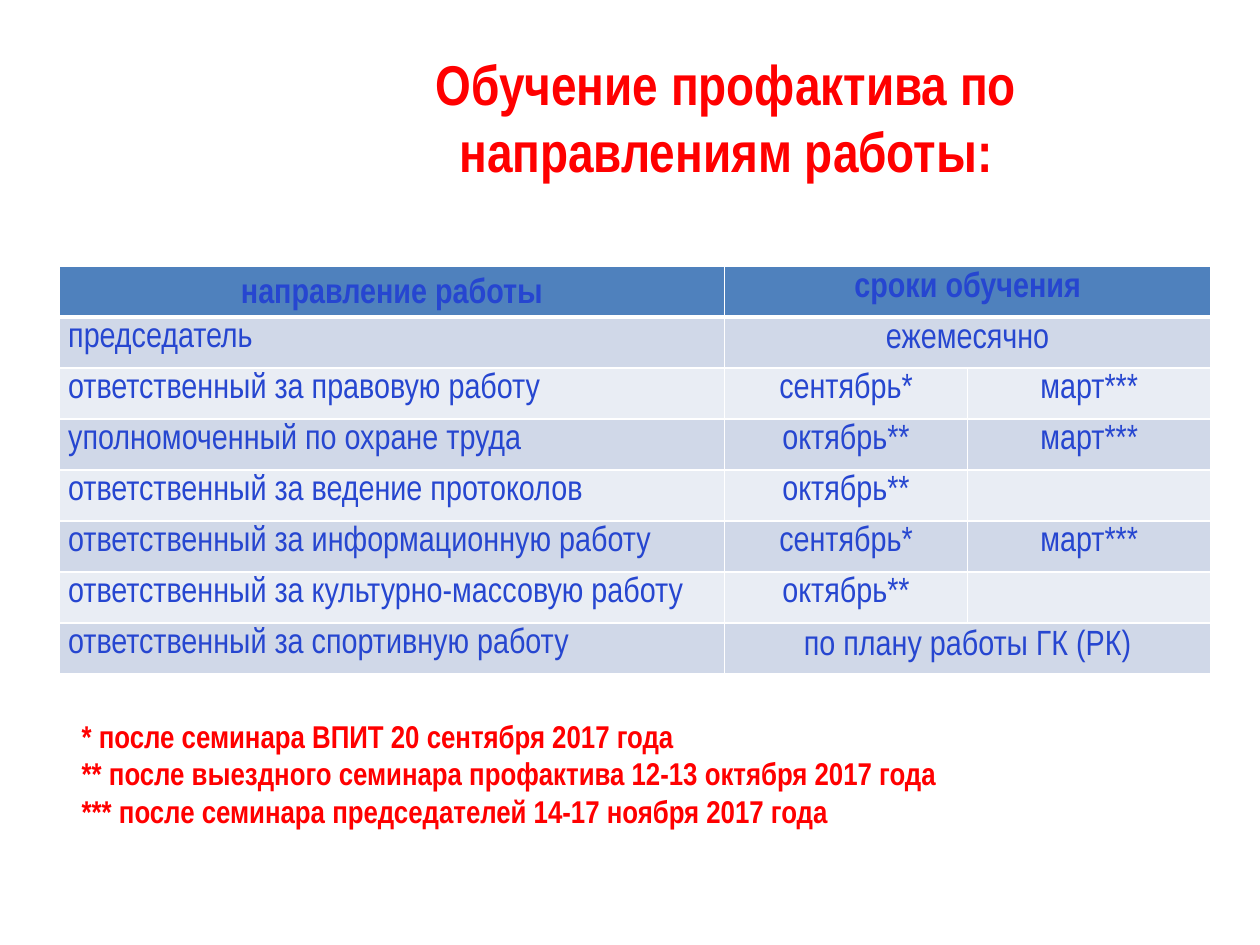
import pptx
import pptx.util
import pptx.dml.color
import pptx.enum.text
import pptx.oxml
import pptx.oxml.ns

Pt = pptx.util.Pt
RGBColor = pptx.dml.color.RGBColor
ALIGN = pptx.enum.text.PP_ALIGN
ANCHOR = pptx.enum.text.MSO_ANCHOR

RED = RGBColor(0xFF, 0x00, 0x00)
BLUE = RGBColor(0x26, 0x46, 0xD0)
HEADER = RGBColor(0x4F, 0x81, 0xBD)
BANDS = (RGBColor(0xE9, 0xED, 0xF4), RGBColor(0xD0, 0xD8, 0xE8))
WHITE = RGBColor(0xFF, 0xFF, 0xFF)

TITLE = "Обучение профактива по направлениям работы:"
ROWS = [
    ("направление работы", "сроки обучения"),
    ("председатель", "ежемесячно"),
    ("ответственный за правовую работу", "сентябрь*", "март***"),
    ("уполномоченный по охране труда", "октябрь**", "март***"),
    ("ответственный за ведение протоколов", "октябрь**", ""),
    ("ответственный за информационную работу", "сентябрь*", "март***"),
    ("ответственный за культурно-массовую работу", "октябрь**", ""),
    ("ответственный за спортивную работу", "по плану работы ГК (РК)"),
]
NOTES = [
    "* после семинара ВПИТ 20 сентября 2017 года",
    "** после выездного семинара профактива 12-13 октября 2017 года",
    "*** после семинара председателей 14-17 ноября 2017 года",
]


class Deck:
    """Holds the font and the current slide, and adds elements to it."""

    def __init__(self, font):
        self.font = font
        self.prs = pptx.Presentation()
        self.prs.slide_width, self.prs.slide_height = Pt(720), Pt(540)
        self.s = self.prs.slides.add_slide(self.prs.slide_layouts[5])

    def add_text(self, p, text, size, color, bold=True, align=None):
        p.alignment = align
        r = p.add_run()
        r.text = text
        r.font.name, r.font.size, r.font.bold = self.font, Pt(size), bold
        r.font.color.rgb = color

    def title(self, text, x, y, w, h):
        sp = self.s.shapes.title
        sp.left, sp.top, sp.width, sp.height = Pt(x), Pt(y), Pt(w), Pt(h)
        tf = sp.text_frame
        tf.vertical_anchor = ANCHOR.MIDDLE
        self.add_text(tf.paragraphs[0], text, 32, RED, align=ALIGN.CENTER)

    def notes(self, lines, x, y, w, h):
        sp = self.s.shapes.add_textbox(Pt(x), Pt(y), Pt(w), Pt(h))
        tf = sp.text_frame
        tf.word_wrap = True
        tf.vertical_anchor = ANCHOR.MIDDLE
        for i, line in enumerate(lines):
            p = tf.add_paragraph() if i else tf.paragraphs[0]
            self.add_text(p, line, 18, RED)

    def borders(self, cell, top, bottom):
        tcPr = cell._tc.get_or_add_tcPr()
        for side, width in (("L", 1), ("R", 1), ("T", top), ("B", bottom)):
            tcPr.append(pptx.oxml.parse_xml(
                f'<a:ln{side} {pptx.oxml.ns.nsdecls("a")} w="{Pt(width)}">'
                f'<a:solidFill><a:srgbClr val="{WHITE}"/></a:solidFill></a:ln{side}>'))

    def table(self, rows, x, y, widths, row_height):
        frame = self.s.shapes.add_table(len(rows), len(widths), Pt(x), Pt(y),
                                        Pt(sum(widths)), Pt(row_height * len(rows)))
        tbl = frame.table
        for col, width in zip(tbl.columns, widths):
            col.width = Pt(width)
        for i, texts in enumerate(rows):
            tbl.rows[i].height = Pt(row_height)
            for j in range(len(widths)):
                cell = tbl.cell(i, j)
                self.borders(cell, 3 if i == 1 else 1, 3 if i == 0 else 1)
                cell.fill.solid()
                cell.fill.fore_color.rgb = BANDS[i % 2] if i else HEADER
            spans = len(texts) < len(widths)
            if spans:
                tbl.cell(i, 1).merge(tbl.cell(i, 2))
            for j, text in enumerate(texts):
                if text:
                    self.fill_cell(tbl.cell(i, j), text, i == 0, j == 0, spans and j == 1)

    def fill_cell(self, cell, text, header, first, spanned):
        p = cell.text_frame.paragraphs[0]
        if not spanned:
            cell.margin_left = cell.margin_right = Pt(5)
            cell.margin_top = cell.margin_bottom = Pt(0)
            p.line_spacing = 1.15
        if header and first:
            cell.vertical_anchor = ANCHOR.MIDDLE
        align = ALIGN.JUSTIFY if first and not header else ALIGN.CENTER
        self.add_text(p, text, 20, BLUE, header, align)


def main():
    deck = Deck("Arial Narrow")
    deck.title(TITLE, 146, 21.6, 538, 90)
    deck.table(ROWS, 34, 152, (380, 139, 139), 29.15)
    deck.notes(NOTES, 39.6, 405.5, 652, 72.7)
    deck.prs.save("out.pptx")


if __name__ == "__main__":
    main()
